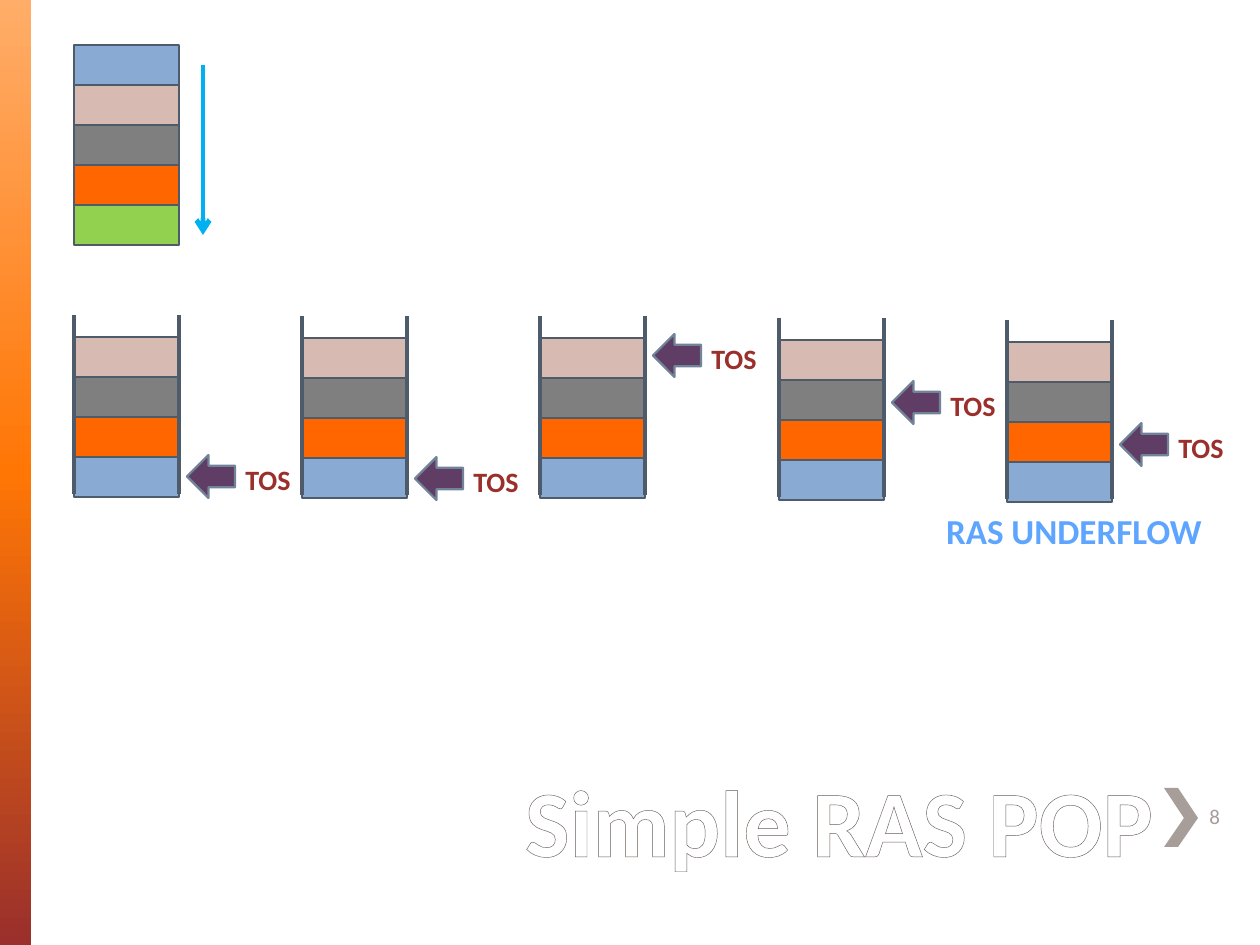
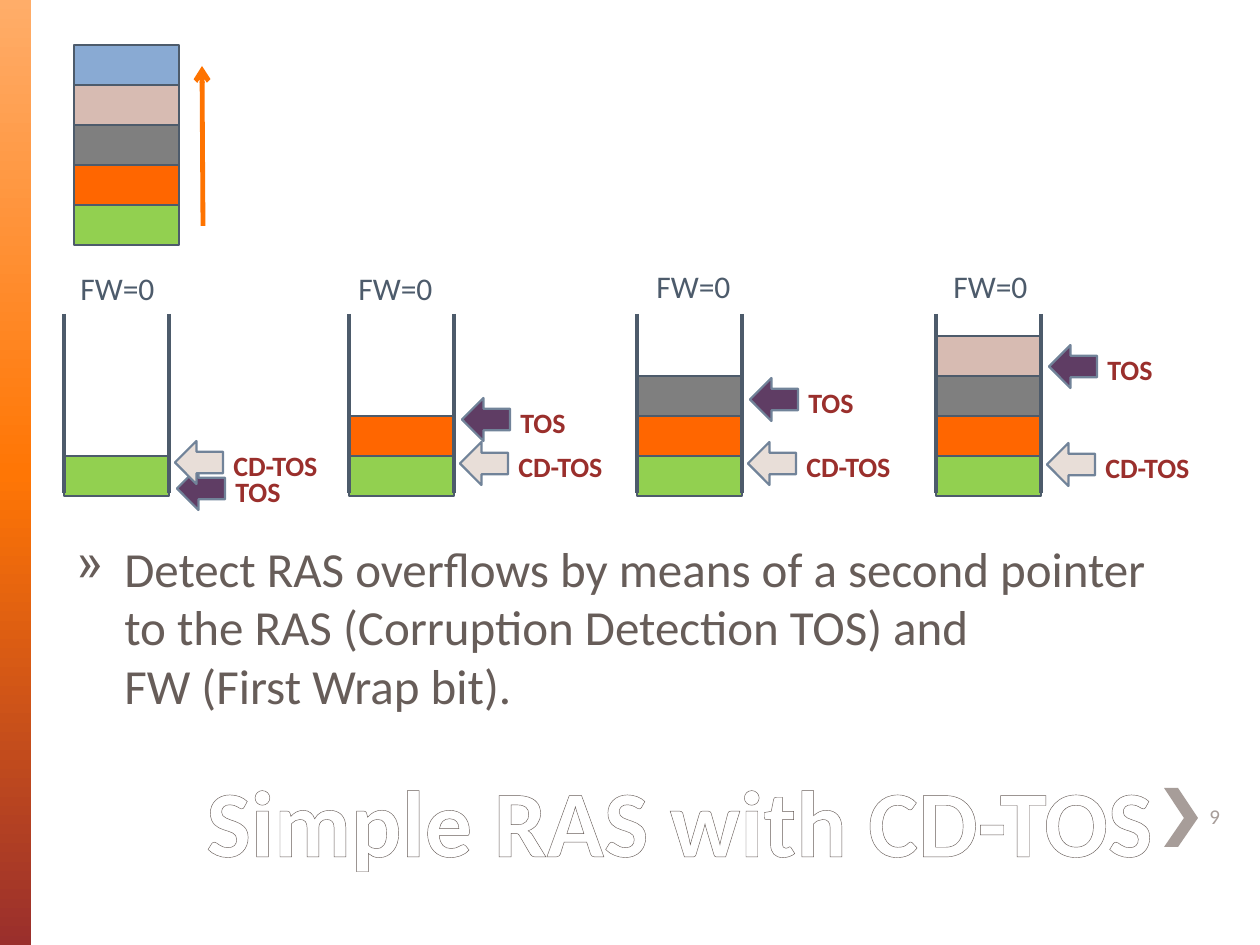
from lxml.etree import SubElement
from pptx import Presentation
from pptx.dml.color import RGBColor
from pptx.enum.shapes import MSO_CONNECTOR, MSO_SHAPE
from pptx.enum.text import MSO_ANCHOR, MSO_AUTO_SIZE, PP_ALIGN
from pptx.oxml.ns import qn
from pptx.util import Emu, Pt

PX = 914400 / 126
SLIDE_SIZE = 1260, 945
FONT = "Calibri"

BLUE, PINK, GRAY, ORANGE, GREEN = "89AAD3", "D7BBB2", "7F7F7F", "FF6600", "92D050"
SLATE, MAROON, WHITE = "4D5B6B", "9A2F2C", "FFFFFF"
TAUPE, BROWN, SKY = "A79D99", "675D59", "5DA5FF"
POINTER_FILLS = {"TOS": "5F3D64", "CD-TOS": "E8DED8"}
POINTER_LINE = "718399"
BAND_STOPS = [(0, "FFAD69"), (50, "FF7605"), (100, MAROON)]
CHEVRON = [(1178, 788), (1164, 788), (1184, 818), (1164, 847), (1178, 847), (1198, 818)]

CELL_WIDTH, CELL_HEIGHT = 105, 40
RAIL_TOP, RAIL_BOTTOM = 182, 3  # heights above the floor of a stack
POINTER_WIDTH, POINTER_HEIGHT = 48, 43
POINTER_OFFSETS = {"TOS": 113, "CD-TOS": 111}
LABEL_OFFSET, LABEL_HEIGHT = 46, 47
LABEL_WIDTHS = {"TOS": 78, "CD-TOS": 113}

# Cells are listed from the floor upwards.
CALL_ORDER = [GREEN, ORANGE, GRAY, PINK, BLUE]
CALL_LEFT, CALL_FLOOR = 74, 245
WRAPPED = [BLUE, ORANGE, GRAY, PINK]

# Stack: left, floor, cells, [(pointer, top)]
POP_STACKS = [
    (74, 497, WRAPPED, [("TOS", 455)]),
    (302, 498, WRAPPED, [("TOS", 457)]),
    (540, 498, WRAPPED, [("TOS", 334)]),
    (779, 500, WRAPPED, [("TOS", 381)]),
    (1007, 502, WRAPPED, [("TOS", 423)]),
]
PUSH_STACKS = [
    (64, 496, CALL_ORDER[:1], [("TOS", 467), ("CD-TOS", 441)]),
    (349, 496, CALL_ORDER[:2], [("TOS", 398), ("CD-TOS", 442)]),
    (637, 496, CALL_ORDER[:3], [("TOS", 378), ("CD-TOS", 442)]),
    (936, 496, CALL_ORDER[:4], [("TOS", 345), ("CD-TOS", 443)]),
]
WRAP_BIT = "FW=0"
WRAP_BIT_PLACES = [(68, 263), (346, 263), (644, 261), (941, 261)]
BODY_LINES = [
    "Detect RAS overflows by means of a second pointer to the RAS (Corruption Detection TOS) and",
    "FW (First Wrap bit).",
]


def px(length):
    return Emu(round(length * PX))


def color(value):
    return RGBColor.from_string(value)


def style(shape, fill, line=None, line_width=1.5):
    shape.shadow.inherit = False
    shape.fill.solid()
    shape.fill.fore_color.rgb = color(fill)
    if line:
        shape.line.color.rgb = color(line)
        shape.line.width = Pt(line_width)
    else:
        shape.line.fill.background()


def add_preset(slide, kind, box, *look):
    shape = slide.shapes.add_shape(kind, *map(px, box))
    style(shape, *look)
    return shape


def add_line(slide, start, end, line, width, arrow=False):
    connector = slide.shapes.add_connector(
        MSO_CONNECTOR.STRAIGHT, *map(px, (*start, *end)))
    connector.line.color.rgb = color(line)
    connector.line.width = Pt(width)
    if arrow:
        SubElement(connector.line._get_or_add_ln(), qn("a:tailEnd"), type="arrow")
    SubElement(connector._element.spPr, qn("a:effectLst"))


def add_text(slide, box, lines, size, text_color, bold=False, wrap=True,
             align=PP_ALIGN.LEFT, anchor=MSO_ANCHOR.TOP):
    frame = slide.shapes.add_textbox(*map(px, box)).text_frame
    frame.word_wrap = wrap
    frame.vertical_anchor = anchor
    frame.auto_size = MSO_AUTO_SIZE.NONE if wrap else MSO_AUTO_SIZE.SHAPE_TO_FIT_TEXT
    paragraph = frame.paragraphs[0]
    paragraph.alignment = align
    font = paragraph.font
    font.name, font.size, font.bold = FONT, Pt(size), bold
    font.color.rgb = color(text_color)
    for index, line in enumerate(lines):
        if index:
            paragraph.add_line_break()
        paragraph.add_run().text = line
    return paragraph


def outline_text(paragraph, line_color, width):
    for run in paragraph.runs:
        line = SubElement(run._r.get_or_add_rPr(), qn("a:ln"), w=str(Pt(width)))
        fill = SubElement(line, qn("a:solidFill"))
        SubElement(fill, qn("a:srgbClr"), val=line_color)


def add_bullet(paragraph, character, indent):
    properties = paragraph._p.get_or_add_pPr()
    properties.set("marL", str(px(indent)))
    properties.set("indent", str(-px(indent)))
    bullet = properties.makeelement(qn("a:buChar"), {"char": character})
    properties.insert_element_before(bullet, "a:tabLst", "a:defRPr")


def add_band(slide):
    band = add_preset(slide, MSO_SHAPE.RECTANGLE, (0, 0, 31, SLIDE_SIZE[1]), WHITE)
    band.fill.gradient()
    band.fill.gradient_angle = 270
    stops = band._element.spPr.find(qn("a:gradFill")).find(qn("a:gsLst"))
    for stop in list(stops):
        stops.remove(stop)
    for position, value in BAND_STOPS:
        stop = SubElement(stops, qn("a:gs"), pos=str(position * 1000))
        SubElement(stop, qn("a:srgbClr"), val=value)


def add_frame(slide, title, number):
    """Add what every slide shares: band, chevron, title and number."""
    add_band(slide)
    builder = slide.shapes.build_freeform(*CHEVRON[0], scale=PX)
    builder.add_line_segments(CHEVRON[1:], close=True)
    style(builder.convert_to_shape(), TAUPE)
    heading = add_text(slide, (168, 724, 998, 158), [title], 54, WHITE, bold=True,
                       align=PP_ALIGN.RIGHT, anchor=MSO_ANCHOR.BOTTOM)
    outline_text(heading, BROWN, 1)
    add_text(slide, (1197, 791, 53, 50), [str(number)], 12, TAUPE,
             anchor=MSO_ANCHOR.MIDDLE)


def add_cells(slide, left, floor, cells):
    for level, fill in enumerate(cells, start=1):
        box = left, floor - level * CELL_HEIGHT, CELL_WIDTH, CELL_HEIGHT
        add_preset(slide, MSO_SHAPE.RECTANGLE, box, fill, SLATE)


def add_pointer(slide, name, left, top):
    add_preset(slide, MSO_SHAPE.LEFT_ARROW, (left, top, POINTER_WIDTH, POINTER_HEIGHT),
               POINTER_FILLS[name], POINTER_LINE, 1.25)
    add_text(slide, (left + LABEL_OFFSET, top + 1, LABEL_WIDTHS[name], LABEL_HEIGHT),
             [name], 16, MAROON, bold=True, wrap=False)


def add_stack(slide, left, floor, cells, pointers):
    add_cells(slide, left, floor, cells)
    for x in (left, left + CELL_WIDTH):
        add_line(slide, (x, floor - RAIL_TOP), (x, floor - RAIL_BOTTOM), SLATE, 2.25)
    for name, top in pointers:
        add_pointer(slide, name, left + POINTER_OFFSETS[name], top)


def add_ras_slide(presentation, title, number, stacks, arrow):
    slide = presentation.slides.add_slide(presentation.slide_layouts[6])
    add_frame(slide, title, number)
    add_cells(slide, CALL_LEFT, CALL_FLOOR, CALL_ORDER)
    add_line(slide, *arrow, 2.75, arrow=True)
    for stack in stacks:
        add_stack(slide, *stack)
    return slide


def main():
    presentation = Presentation()
    presentation.slide_width, presentation.slide_height = map(px, SLIDE_SIZE)

    pop_slide = add_ras_slide(presentation, "Simple RAS POP", 8, POP_STACKS,
                              ((203, 65), (203, 235), "00B0F0"))
    add_text(pop_slide, (932, 503, 284, 55), ["RAS UNDERFLOW"], 20, SKY,
             bold=True, wrap=False, align=PP_ALIGN.CENTER)

    push_slide = add_ras_slide(presentation, "Simple RAS with CD-TOS", 9, PUSH_STACKS,
                               ((203, 226), (202, 66), "FE7300"))
    for left, top in WRAP_BIT_PLACES:
        add_text(push_slide, (left, top, 125, 50), [WRAP_BIT], 18, SLATE)
    body = add_text(push_slide, (64, 532, 1133, 199), BODY_LINES, 28, BROWN)
    add_bullet(body, "»", 48)

    presentation.save("out.pptx")


if __name__ == "__main__":
    main()
